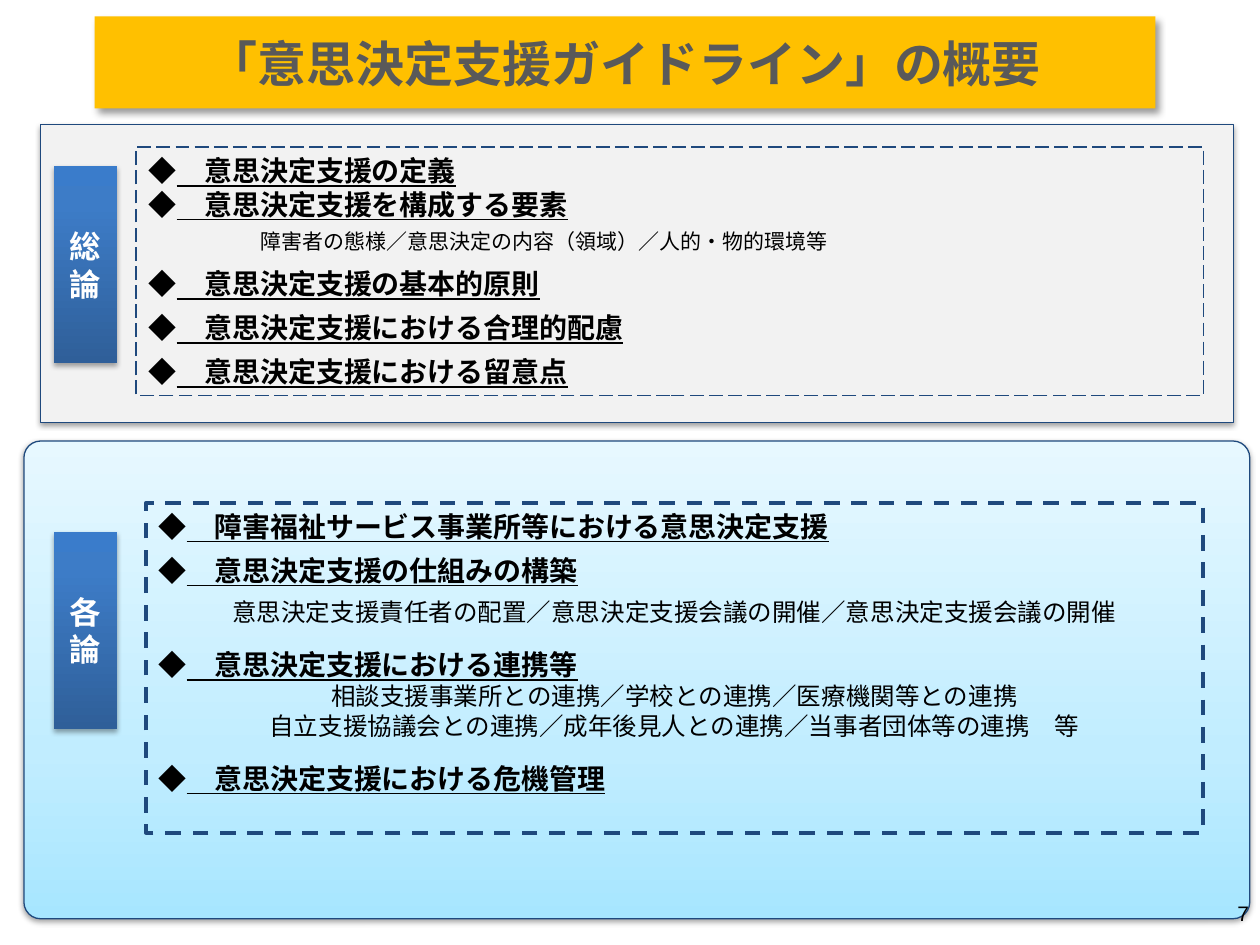
from lxml.etree import SubElement
from pptx import Presentation
from pptx.dml.color import RGBColor
from pptx.enum.dml import MSO_LINE as Dash
from pptx.enum.shapes import MSO_SHAPE as Shape
from pptx.enum.text import MSO_ANCHOR as Anchor, MSO_AUTO_SIZE as AutoSize, PP_ALIGN as Align
from pptx.oxml.ns import qn
from pptx.util import Pt

AMBER = RGBColor(0xFF, 0xC0, 0x00)
GRAY = RGBColor(0x59, 0x59, 0x59)
PALE = RGBColor(0xF2, 0xF2, 0xF2)
NAVY = RGBColor(0x1F, 0x49, 0x7D)
BLACK = RGBColor(0, 0, 0)
WHITE = RGBColor(0xFF, 0xFF, 0xFF)
LABEL_BLUES = [(0, RGBColor(0x2F, 0x5F, 0x99)), (80, RGBColor(0x3D, 0x7C, 0xC7)),
               (100, RGBColor(0x3A, 0x7C, 0xCB))]
SKY_BLUES = [(0, RGBColor(0xA7, 0xE6, 0xFF)), (35, RGBColor(0xC1, 0xED, 0xFF)),
             (100, RGBColor(0xE7, 0xF8, 0xFF))]
JAPANESE = "Noto Sans CJK JP"

GENERAL_TOPICS = [
    ("意思決定支援の定義", 0),
    ("意思決定支援を構成する要素", 0),
    "障害者の態様／意思決定の内容（領域）／人的・物的環境等",
    ("意思決定支援の基本的原則", 0),
    ("意思決定支援における合理的配慮", 0),
    ("意思決定支援における留意点", 0),
]
SPECIFIC_TOPICS = [
    ("障害福祉サービス事業所等における意思決定支援", 0),
    ("意思決定支援の仕組みの構築", 0),
    "意思決定支援責任者の配置／意思決定支援会議の開催／意思決定支援会議の開催",
    ("意思決定支援における連携等", 12),
    "相談支援事業所との連携／学校との連携／医療機関等との連携",
    "自立支援協議会との連携／成年後見人との連携／当事者団体等の連携　等",
    ("意思決定支援における危機管理", 12),
]


def place(part, left, top, width, height):
    part.left, part.top, part.width, part.height = Pt(left), Pt(top), Pt(width), Pt(height)


def add_shadow(part, alpha, blur, distance, angle):
    part.shadow.inherit = False
    effects = part._element.spPr.find(qn("a:effectLst"))
    outer = SubElement(effects, qn("a:outerShdw"), blurRad=str(Pt(blur)), dist=str(Pt(distance)),
                       dir=str(angle * 60000), algn="ctr", rotWithShape="0")
    color = SubElement(outer, qn("a:srgbClr"), val=str(BLACK))
    SubElement(color, qn("a:alpha"), val=str(alpha * 1000))


def fill_upward(part, stops):
    part.fill.gradient()
    gradient = part._element.spPr.find(qn("a:gradFill"))
    for child in list(gradient):
        gradient.remove(child)
    stop_list = SubElement(gradient, qn("a:gsLst"))
    for position, color in stops:
        stop = SubElement(stop_list, qn("a:gs"), pos=str(position * 1000))
        SubElement(stop, qn("a:srgbClr"), val=str(color))
    SubElement(gradient, qn("a:lin"), ang=str(270 * 60000), scaled="0")


def style_run(run, size, color, font="Calibri", bold=False, underline=False):
    run.font.name, run.font.size = font, Pt(size)
    run.font.bold, run.font.underline = bold, underline
    run.font.color.rgb = color
    SubElement(run._r.get_or_add_rPr(), qn("a:ea"), typeface=JAPANESE)


def format_title(title):
    place(title, 54, 9.4, 606.2, 52.6)
    title.fill.solid()
    title.fill.fore_color.rgb = AMBER
    add_shadow(title, 40, 4, 3, 45)
    frame = title.text_frame
    frame.text = "「意思決定支援ガイドライン」の概要"
    frame.vertical_anchor = Anchor.MIDDLE
    frame.auto_size = AutoSize.NONE
    frame.paragraphs[0].alignment = Align.CENTER
    style_run(frame.paragraphs[0].runs[0], 28, GRAY, bold=True)


def add_panel(slide, kind, left, top, width, height):
    panel = slide.shapes.add_shape(kind, Pt(left), Pt(top), Pt(width), Pt(height))
    panel.line.color.rgb = NAVY
    panel.line.width = Pt(0.75)
    add_shadow(panel, 38, 3.1, 1.6, 90)
    return panel


def add_label(slide, top, text):
    label = slide.shapes.add_shape(Shape.RECTANGLE, Pt(31), Pt(top), Pt(36), Pt(112.5))
    fill_upward(label, LABEL_BLUES)
    label.line.fill.background()
    add_shadow(label, 35, 3.1, 1.8, 90)
    frame = label.text_frame
    frame.text = text
    frame.word_wrap = True
    frame.vertical_anchor = Anchor.MIDDLE
    for paragraph in frame.paragraphs:
        paragraph.alignment = Align.CENTER
        style_run(paragraph.runs[0], 18, WHITE, bold=True)


def set_indent(paragraph, left):
    properties = paragraph._p.get_or_add_pPr()
    properties.set("marL", str(Pt(left)))
    properties.set("indent", "0")
    SubElement(properties, qn("a:buNone"))


def write_topic(paragraph, topic, before, after):
    paragraph.alignment = Align.LEFT
    paragraph.space_before, paragraph.space_after = Pt(before), Pt(after)
    set_indent(paragraph, 0)
    for text, marked in (("◆", False), ("　" + topic, True)):
        run = paragraph.add_run()
        run.text = text
        style_run(run, 16, BLACK, JAPANESE, marked, marked)


def write_detail(paragraph, detail, size, align, indent, before, after):
    paragraph.text = detail
    paragraph.alignment = align
    paragraph.space_before, paragraph.space_after = Pt(before), Pt(after)
    set_indent(paragraph, indent)
    style_run(paragraph.runs[0], size, BLACK, JAPANESE)


def fill_list(slide, body, topics, tight, detail_format, dash, weight):
    slide.shapes._spTree.append(body._element)
    body.line.color.rgb = NAVY
    body.line.width = Pt(weight)
    body.line.dash_style = dash
    frame = body.text_frame
    frame.auto_size = AutoSize.NONE
    frame.vertical_anchor = Anchor.TOP
    for index, entry in enumerate(topics):
        paragraph = frame.add_paragraph() if index else frame.paragraphs[0]
        paragraph.line_spacing = 1.0
        if isinstance(entry, str):
            write_detail(paragraph, entry, *detail_format)
        else:
            topic, before = entry
            write_topic(paragraph, topic, before, 0 if index in tight or before else 6)


def add_page_number(slide):
    box = slide.shapes.add_textbox(Pt(553), Pt(507.6), Pt(167.8), Pt(28.8))
    frame = box.text_frame
    frame.text = "7"
    frame.word_wrap = True
    frame.vertical_anchor = Anchor.MIDDLE
    frame.paragraphs[0].alignment = Align.RIGHT
    style_run(frame.paragraphs[0].runs[0], 12, BLACK, "Arial")


def main():
    deck = Presentation()
    deck.slide_width, deck.slide_height = Pt(720), Pt(540)
    slide = deck.slides.add_slide(deck.slide_layouts[3])
    title, general, specific = slide.placeholders
    format_title(title)

    general_panel = add_panel(slide, Shape.RECTANGLE, 23, 71.3, 682, 170)
    general_panel.fill.solid()
    general_panel.fill.fore_color.rgb = PALE
    add_label(slide, 95, "総論")
    specific_panel = add_panel(slide, Shape.ROUNDED_RECTANGLE, 13.7, 252, 700.5, 273)
    specific_panel.adjustments[0] = 0.035
    fill_upward(specific_panel, SKY_BLUES)

    place(general, 77.8, 84.2, 610, 141.8)
    fill_list(slide, general, GENERAL_TOPICS, (0, 1),
              (12, Align.LEFT, 64, 4.6, 7.2), Dash.LONG_DASH, 1)
    place(specific, 83.5, 287.3, 604, 188.6)
    fill_list(slide, specific, SPECIFIC_TOPICS, (),
              (14, Align.CENTER, 0, 0, 0), Dash.DASH, 2.25)
    add_page_number(slide)
    add_label(slide, 304, "各\n論")
    deck.save("out.pptx")


if __name__ == "__main__":
    main()
